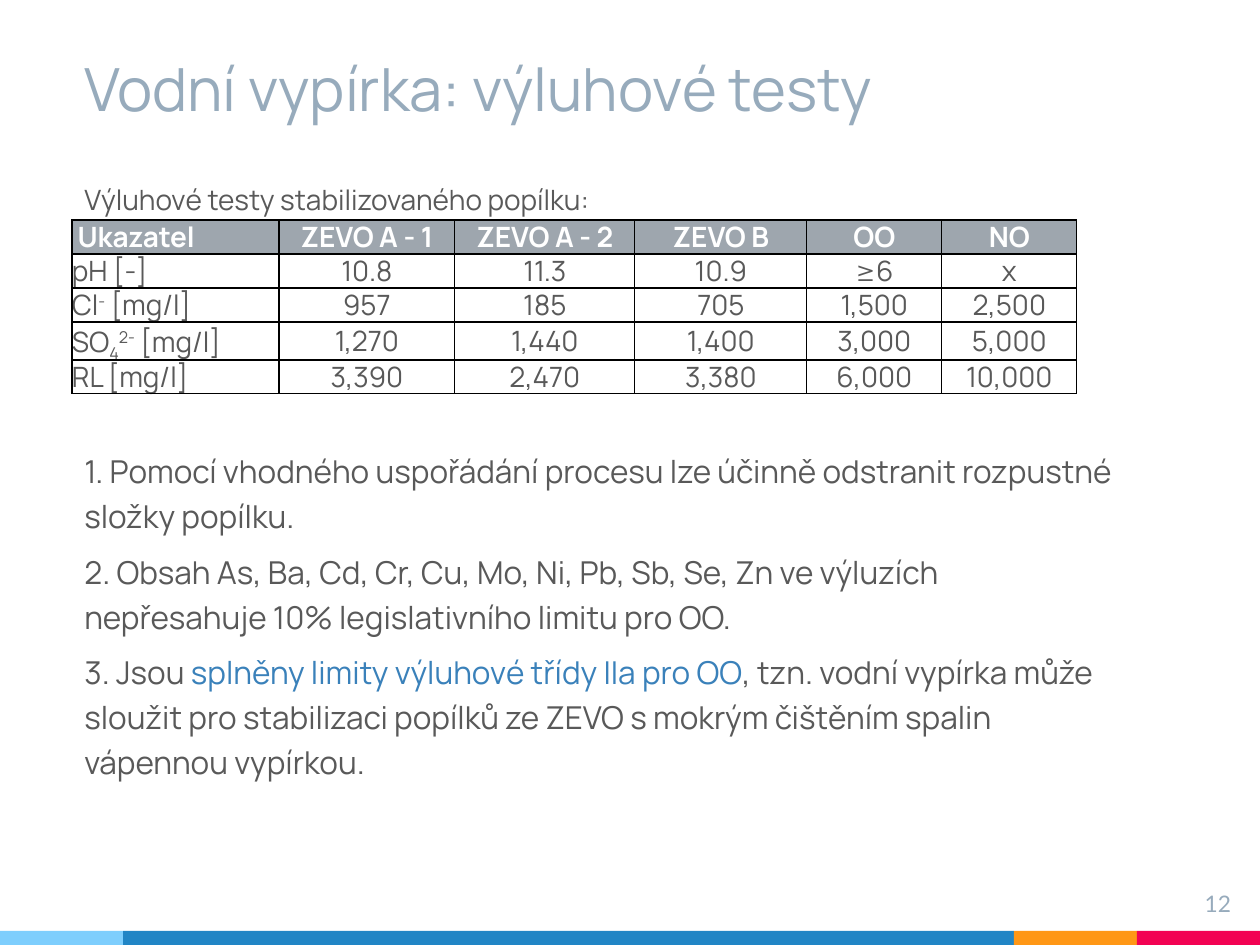
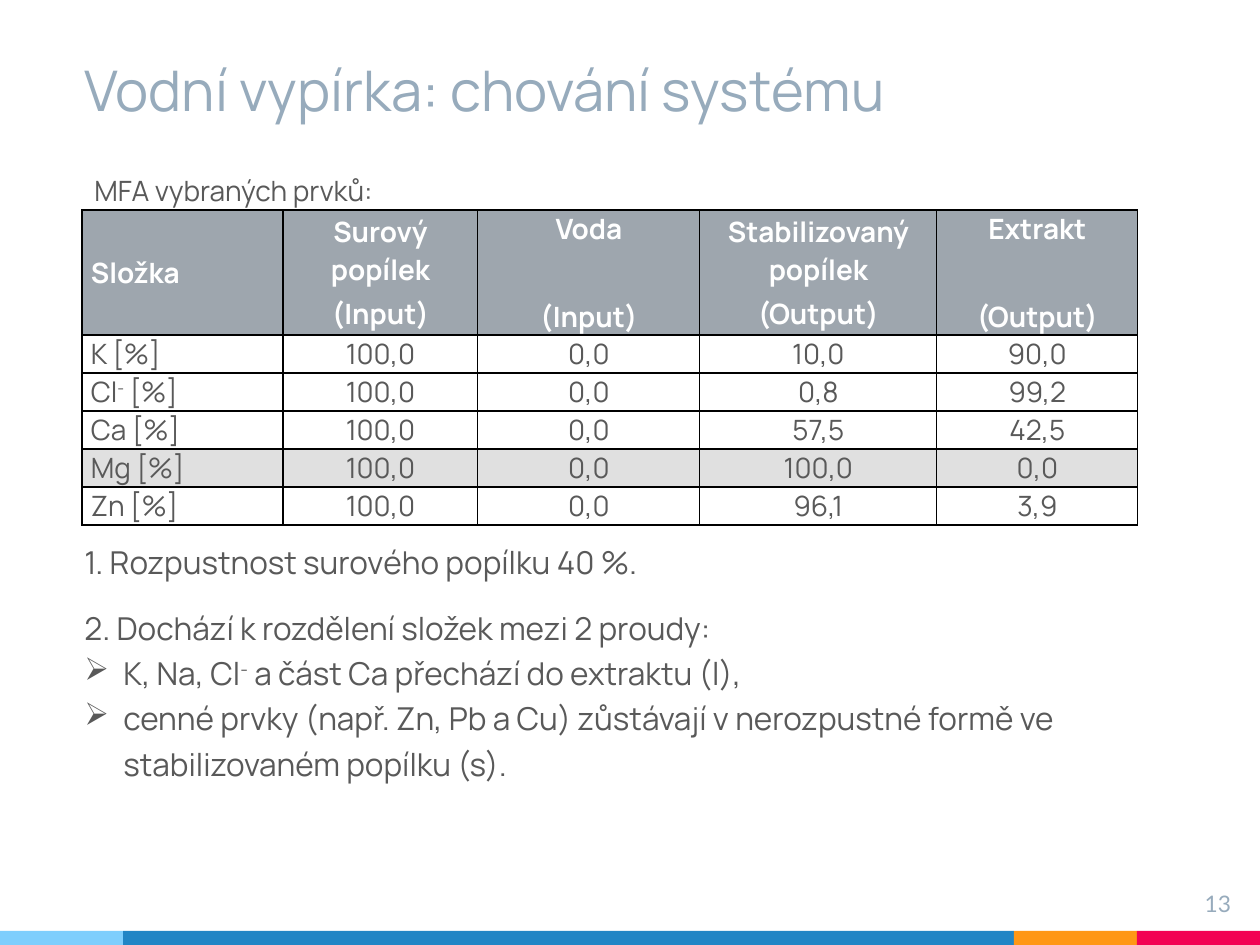
from lxml.etree import SubElement
from pptx import Presentation
from pptx.dml.color import RGBColor
from pptx.enum.shapes import MSO_SHAPE
from pptx.enum.text import MSO_ANCHOR, PP_ALIGN
from pptx.oxml.ns import qn
from pptx.util import Emu, Pt

EMU_PER_PX = 914400 / 126
WIDTH, HEIGHT = 1260, 945
FONT, NUMBER_FONT = "Manrope", "Lato"
TITLE_COLOR, TEXT_COLOR, ACCENT = "97ABBC", "595959", "3A81BA"
HEADER_FILL, MARKED_FILL, WHITE, BLACK = "9EA6AE", "E0E0E0", "FFFFFF", "000000"
BAND = [(123, "7ECEFD"), (891, "2185C5"), (123, "FF9715"), (123, "F20253")]
BAND_TOP = 931
LEFT, TEXT_WIDTH = 72, 1067
SUPER, SUB = {"baseline": 30}, {"baseline": -25}

LEACHING_ROWS = [
    ["\u00a0Ukazatel".replace("\u00a0", " "), "ZEVO A - 1", "ZEVO A - 2", "ZEVO B", "OO", "NO"],
    ["pH [-]", "10.8", "11.3", "10.9", "≥6", "x"],
    [[("Cl", {}), ("-", SUPER), (" [mg/l]", {})], "957", "185", "705", "1,500", "2,500"],
    [[("SO", {}), ("4", SUB), ("2-", SUPER), (" [mg/l]", {})],
     "1,270", "1,440", "1,400", "3,000", "5,000"],
    ["RL [mg/l]", "3,390", "2,470", "3,380", "6,000", "10,000"],
]
FLOW_ROWS = [
    ["Složka", "Surový popílek\n(Input)", "Voda\n(Input)",
     "Stabilizovaný popílek\n(Output)", "Extrakt\n(Output)"],
    ["K [%]", "100,0", "0,0", "10,0", "90,0"],
    [[("Cl", {}), ("-", SUPER), (" [%]", {})], "100,0", "0,0", "0,8", "99,2"],
    ["Ca [%]", "100,0", "0,0", "57,5", "42,5"],
    ["Mg [%]", "100,0", "0,0", "100,0", "0,0"],
    ["Zn [%]", "100,0", "0,0", "96,1", "3,9"],
]


def px(length):
    """Turn pixels into EMU."""
    return Emu(round(length * EMU_PER_PX))


def color(value):
    """Turn a hex string into a colour."""
    return RGBColor.from_string(value)


def write(para, content, size, ink=TEXT_COLOR, font=FONT, bold=False):
    """Fill a paragraph with a string or with (text, style) spans."""
    spans = [(content, {})] if isinstance(content, str) else content
    for text, style in spans:
        span = para.add_run()
        span.text = text
        span.font.name = font
        span.font.size = Pt(size)
        span.font.bold = bold
        span.font.color.rgb = color(style.get("ink", ink))
        if "baseline" in style:
            span.font._element.set("baseline", str(style["baseline"] * 1000))


def add_box(page, left, top, width, height, inset=None, wrap=True):
    """Add an empty text box and return its text frame."""
    box = page.shapes.add_textbox(px(left), px(top), px(width), px(height))
    frame = box.text_frame
    frame.word_wrap = wrap
    if inset is not None:
        frame.margin_left = frame.margin_right = px(inset)
        frame.margin_top = frame.margin_bottom = px(inset)
    return frame


def add_bullet(para):
    """Give a paragraph an arrow bullet with a hanging indent."""
    properties = para._p.get_or_add_pPr()
    properties.set("marL", str(px(39)))
    properties.set("indent", str(-px(39)))
    bullet_color = SubElement(properties, qn("a:buClr"))
    SubElement(bullet_color, qn("a:srgbClr"), val=TEXT_COLOR)
    SubElement(properties, qn("a:buChar"), char="➢")


def add_body(page, top, height, content, bullets=()):
    """Add a body text followed by optional bulleted lines."""
    frame = add_box(page, LEFT, top, TEXT_WIDTH, height)
    for index, line in enumerate([content, *bullets]):
        para = frame.add_paragraph() if index else frame.paragraphs[0]
        para.line_spacing = 1.2
        write(para, line, 18)
        if index:
            add_bullet(para)


def add_caption(page, left, top, width, text):
    """Add the caption above a table."""
    frame = add_box(page, left, top, width, 50, wrap=False)
    frame.paragraphs[0].line_spacing = 1.2
    write(frame.paragraphs[0], text, 16)


def add_cell_border(cell):
    """Draw a thin black line on all sides of a cell."""
    properties = cell._tc.get_or_add_tcPr()
    for position, side in enumerate(("lnL", "lnR", "lnT", "lnB")):
        line = properties.makeelement(qn(f"a:{side}"), {"w": str(Pt(0.75))})
        fill = SubElement(line, qn("a:solidFill"))
        SubElement(fill, qn("a:srgbClr"), val=BLACK)
        properties.insert(position, line)


def fill_cell(cell, content, header, centred, fill, margin, spacing):
    """Write and format one table cell."""
    cell.fill.solid()
    cell.fill.fore_color.rgb = color(fill)
    cell.vertical_anchor = MSO_ANCHOR.MIDDLE
    cell.margin_left = cell.margin_right = px(margin)
    cell.margin_top = cell.margin_bottom = 0
    lines = content.split("\n") if isinstance(content, str) else [content]
    for index, line in enumerate(lines):
        para = cell.text_frame.add_paragraph() if index else cell.text_frame.paragraphs[0]
        para.alignment = PP_ALIGN.CENTER if centred else PP_ALIGN.LEFT
        para.line_spacing = spacing
        if index < len(lines) - 1:
            para.space_after = Pt(3 if " " in line else 28)
        write(para, line, 16, WHITE if header else TEXT_COLOR, bold=header)
    add_cell_border(cell)


def add_grid(page, left, top, widths, heights, rows, margin=0, spacing=1.0, marked=None):
    """Add a bordered table with a grey header row."""
    table = page.shapes.add_table(len(rows), len(widths), px(left), px(top),
                                  px(sum(widths)), px(sum(heights))).table
    for column, width in zip(table.columns, widths):
        column.width = px(width)
    for row_index, (row, height) in enumerate(zip(rows, heights)):
        table.rows[row_index].height = px(height)
        fill = {0: HEADER_FILL, marked: MARKED_FILL}.get(row_index, WHITE)
        for column_index, content in enumerate(row):
            fill_cell(table.cell(row_index, column_index), content, row_index == 0,
                      column_index > 0, fill, margin, spacing)


def add_page(deck, title, title_size, number):
    """Add a slide with the colour band, title and page number."""
    page = deck.slides.add_slide(deck.slide_layouts[6])
    left = 0
    for width, fill in BAND:
        bar = page.shapes.add_shape(MSO_SHAPE.RECTANGLE, px(left), px(BAND_TOP),
                                    px(width), px(HEIGHT - BAND_TOP))
        bar.shadow.inherit = False
        bar.fill.solid()
        bar.fill.fore_color.rgb = color(fill)
        bar.line.fill.background()
        left += width
    frame = add_box(page, LEFT, 39, TEXT_WIDTH, 97, inset=13)
    frame.vertical_anchor = MSO_ANCHOR.BOTTOM
    write(frame.paragraphs[0], title, title_size, TITLE_COLOR)
    frame = add_box(page, 1168, 877, 76, 58, inset=13)
    frame.paragraphs[0].alignment = PP_ALIGN.RIGHT
    write(frame.paragraphs[0], number, 13, TITLE_COLOR, NUMBER_FONT)
    return page


def build_leaching_tests(deck):
    """Build the slide on leaching tests."""
    page = add_page(deck, "Vodní vypírka: výluhové testy", 34, "12")
    add_caption(page, LEFT, 170, 542, "Výluhové testy stabilizovaného popílku:")
    add_grid(page, LEFT, 220, [207, 176, 180, 172, 135, 135], [34, 34, 34, 38, 34],
             LEACHING_ROWS, spacing=0.9)
    add_body(page, 438, 101, "1. Pomocí vhodného uspořádání procesu lze účinně odstranit "
             "rozpustné složky popílku.")
    add_body(page, 539, 101, "2. Obsah As, Ba, Cd, Cr, Cu, Mo, Ni, Pb, Sb, Se, Zn ve výluzích "
             "nepřesahuje 10% legislativního limitu pro OO.")
    add_body(page, 639, 146, [
        ("3. Jsou ", {}),
        ("splněny limity výluhové třídy IIa pro OO", {"ink": ACCENT}),
        (", tzn. vodní vypírka může sloužit pro stabilizaci popílků ze ZEVO "
         "s mokrým čištěním spalin vápennou vypírkou.", {}),
    ])


def build_system_behaviour(deck):
    """Build the slide on the behaviour of the system."""
    page = add_page(deck, "Vodní vypírka: chování systému", 32, "13")
    add_grid(page, 82, 210, [201, 195, 222, 237, 201], [125] + [38] * 5,
             FLOW_ROWS, margin=9, marked=4)
    add_body(page, 529, 54, "1. Rozpustnost surového popílku 40 %.")
    add_body(page, 595, 192, "2. Dochází k rozdělení složek mezi 2 proudy:", [
        [("K, Na, Cl", {}), ("-", SUPER), (" a část Ca přechází do extraktu (l),", {})],
        "cenné prvky (např. Zn, Pb a Cu) zůstávají v nerozpustné formě ve "
        "stabilizovaném popílku (s).",
    ])
    add_caption(page, 82, 161, 318, "MFA vybraných prvků:")


def main():
    """Build and save the deck."""
    deck = Presentation()
    deck.slide_width, deck.slide_height = px(WIDTH), px(HEIGHT)
    build_leaching_tests(deck)
    build_system_behaviour(deck)
    deck.save("out.pptx")


if __name__ == "__main__":
    main()
